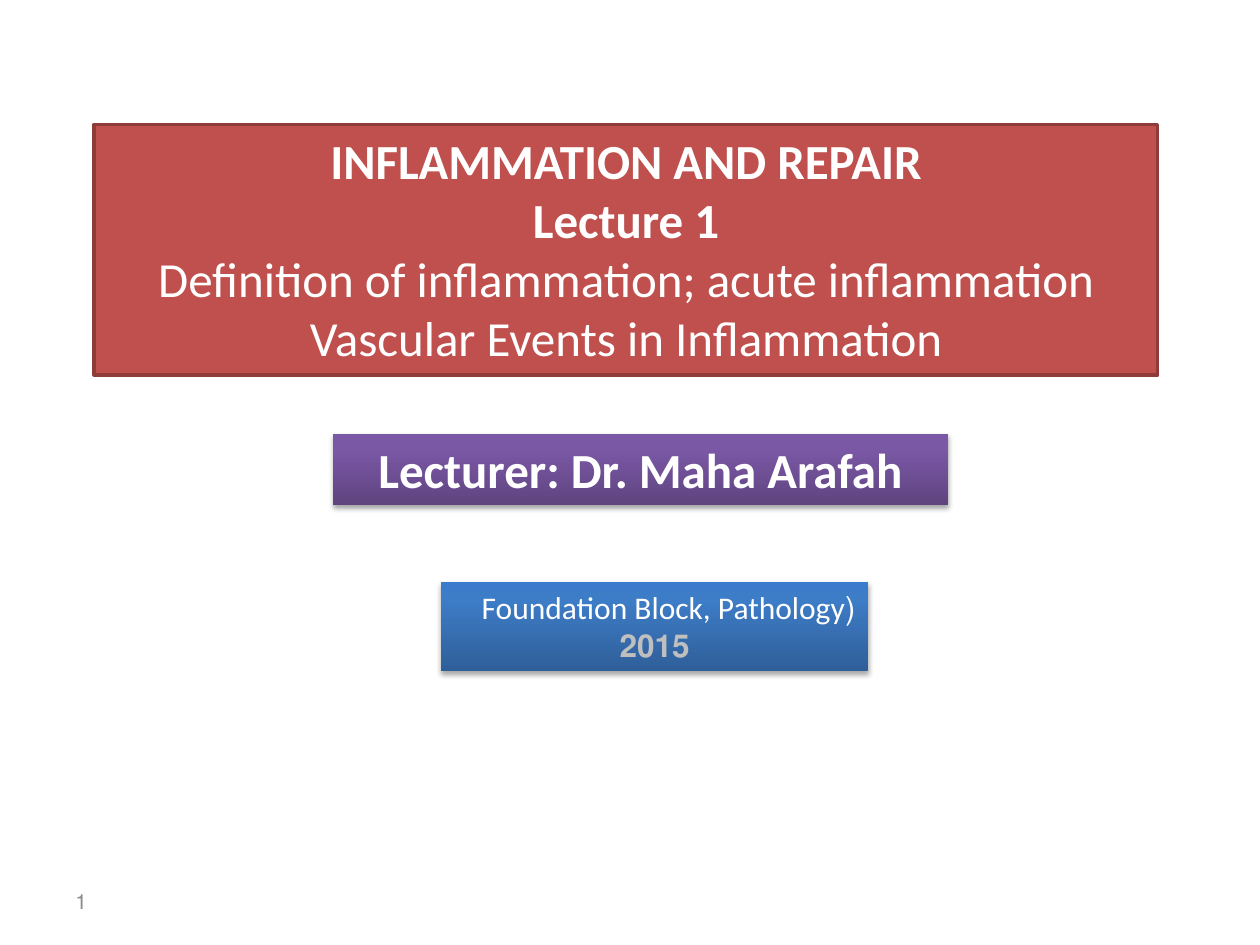
from copy import deepcopy

from lxml import etree
from pptx import Presentation
from pptx.dml.color import RGBColor
from pptx.enum.shapes import MSO_SHAPE
from pptx.enum.text import MSO_ANCHOR, MSO_AUTO_SIZE, PP_ALIGN
from pptx.oxml.ns import qn
from pptx.util import Cm, Pt

RECT = MSO_SHAPE.RECTANGLE
LEFT, CENTER, RIGHT = PP_ALIGN.LEFT, PP_ALIGN.CENTER, PP_ALIGN.RIGHT
TOP, MIDDLE = MSO_ANCHOR.TOP, MSO_ANCHOR.MIDDLE
GROW = MSO_AUTO_SIZE.SHAPE_TO_FIT_TEXT

WHITE = RGBColor(0xFF, 0xFF, 0xFF)
SILVER = RGBColor(0xBF, 0xBF, 0xBF)
GRAY = RGBColor(0x8C, 0x8C, 0x8C)
RED = RGBColor(0xC0, 0x50, 0x4D)
DARK_RED = RGBColor(0x8E, 0x3B, 0x39)
PURPLES = (RGBColor(0x5F, 0x44, 0x80), RGBColor(0x7B, 0x58, 0xA6),
           RGBColor(0x7C, 0x57, 0xA8))
BLUES = (RGBColor(0x2F, 0x5F, 0x99), RGBColor(0x3D, 0x7C, 0xC7),
         RGBColor(0x3A, 0x7C, 0xCB))
STOPS = (0, 0.8, 1)


class SlideBuilder:
    font = "Calibri"

    def __init__(self, s):
        self.s = s

    def add_lines(self, sp, lines, size, anchor=TOP, wrap=True):
        tf = sp.text_frame
        tf.word_wrap = wrap
        tf.vertical_anchor = anchor
        for i, (text, align, color, bold) in enumerate(lines):
            p = tf.add_paragraph() if i else tf.paragraphs[0]
            p.alignment = align
            p._p.get_or_add_pPr().set("rtl", "1")
            r = p.add_run()
            r.text = text
            r.font.color.rgb = color
            style = {"name": self.font, "size": Pt(size), "bold": bold}
            for key, value in style.items():
                setattr(r.font, key, value)

    def label(self, box, lines, size):
        sp = self.s.shapes.add_textbox(*map(Cm, box))
        self.add_lines(sp, lines, size, MIDDLE)

    def rect(self, box, lines, size, wrap=True):
        sp = self.s.shapes.add_shape(RECT, *map(Cm, box))
        sp.shadow.inherit = False
        self.add_lines(sp, lines, size, wrap=wrap)
        sp.text_frame.auto_size = GROW
        return sp

    def solid_rect(self, box, lines, size, fill, line):
        sp = self.rect(box, lines, size, wrap=False)
        sp.fill.solid()
        sp.fill.fore_color.rgb = fill
        sp.line.color.rgb = line
        sp.line.width = Pt(2)

    def gradient_rect(self, box, lines, size, colors):
        sp = self.rect(box, lines, size)
        sp.line.fill.background()
        sp.fill.gradient()
        sp.fill.gradient_angle = 90
        gs_list = sp._element.spPr.find(".//" + qn("a:gsLst"))
        gs_list.append(deepcopy(gs_list[-1]))
        for stop, position, color in zip(sp.fill.gradient_stops, STOPS, colors):
            stop.position = position
            stop.color.rgb = color
        self.shadow(sp)

    def shadow(self, sp):
        effects = sp._element.spPr.find(qn("a:effectLst"))
        outer = etree.SubElement(effects, qn("a:outerShdw"), blurRad=str(Pt(3.1)),
                                 dist=str(Pt(1.8)), dir="5400000", rotWithShape="0")
        color = etree.SubElement(outer, qn("a:srgbClr"), val="000000")
        etree.SubElement(color, qn("a:alpha"), val="35000")


def main():
    prs = Presentation()
    prs.slide_width, prs.slide_height = Cm(25.4), Cm(19.05)
    b = SlideBuilder(prs.slides.add_slide(prs.slide_layouts[6]))

    b.label((1.27, 17.65, 5.92, 1.02), [("1", LEFT, GRAY, False)], 12)
    b.gradient_rect((6.71, 8.74, 12.4, 1.45),
                    [("Lecturer: Dr. Maha Arafah", CENTER, WHITE, True)], 28, PURPLES)
    b.solid_rect((1.9, 2.51, 21.44, 5.05), [
        ("INFLAMMATION AND REPAIR", CENTER, WHITE, True),
        ("Lecture 1", CENTER, WHITE, True),
        ("Definition of inflammation; acute inflammation", CENTER, WHITE, False),
        ("Vascular Events in Inflammation", CENTER, WHITE, False),
    ], 28, RED, DARK_RED)
    b.gradient_rect((8.89, 11.73, 8.61, 1.8), [
        ("(Foundation Block, Pathology", RIGHT, WHITE, False),
        ("2015", CENTER, SILVER, True),
    ], 18, BLUES)

    prs.save("out.pptx")


if __name__ == "__main__":
    main()
